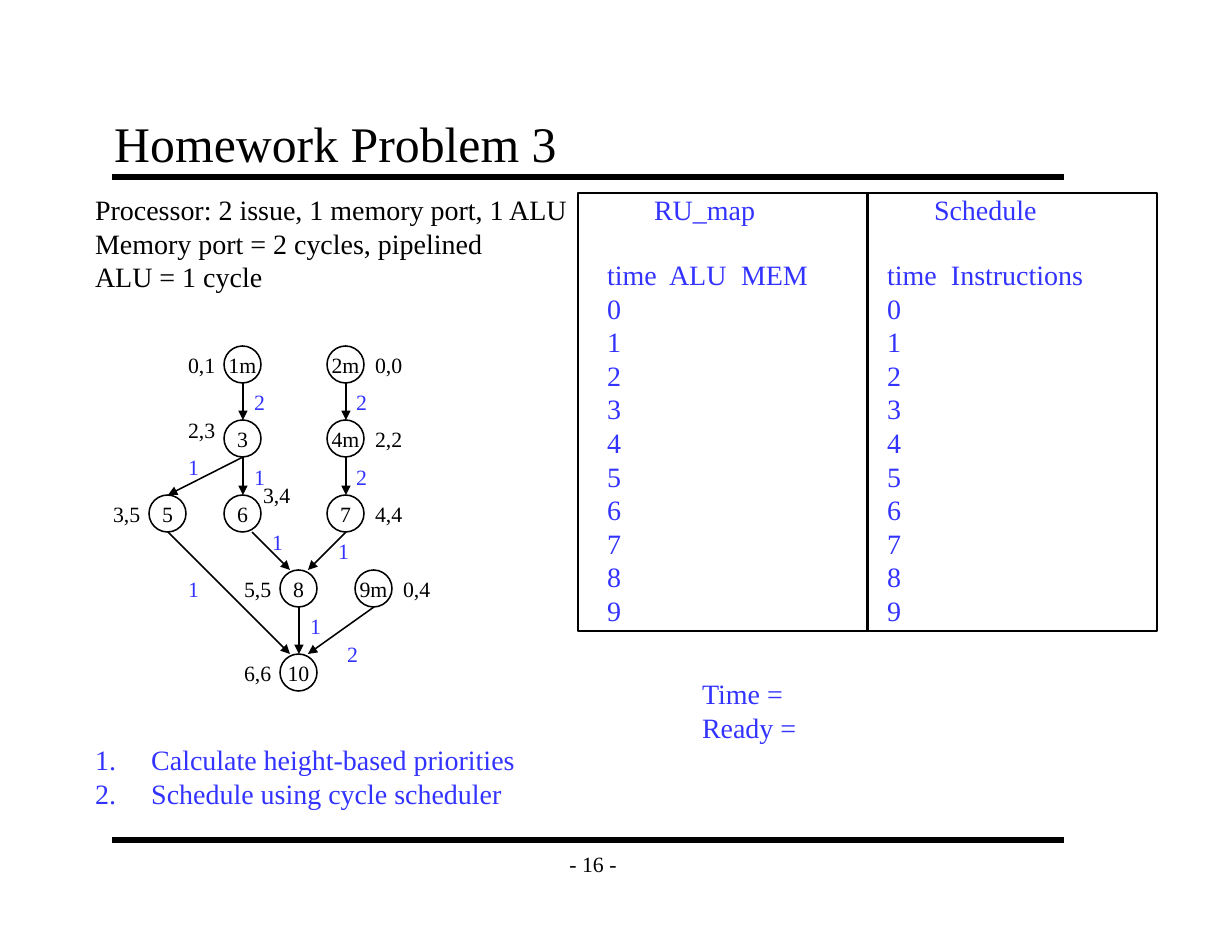
from lxml.etree import SubElement
from pptx import Presentation
from pptx.dml.color import RGBColor
from pptx.enum.shapes import MSO_CONNECTOR as CONNECTOR, MSO_SHAPE as SHAPE
from pptx.enum.text import MSO_ANCHOR as ANCHOR, MSO_AUTO_SIZE as AUTO, PP_ALIGN as ALIGN
from pptx.oxml.ns import qn
from pptx.util import Emu, Pt

EMU_PER_PX = 914400 / 112
BLACK, BLUE = "000000", "3333FF"
NODE, MID = 37, 19  # node diameter and its middle


def px(*lengths):
    return [Emu(round(n * EMU_PER_PX)) for n in lengths]


def write(shape, lines, size, color=BLACK, align=ALIGN.LEFT, anchor=ANCHOR.TOP):
    frame = shape.text_frame
    frame.auto_size = AUTO.NONE
    frame.word_wrap = False
    frame.vertical_anchor = anchor
    for i, line in enumerate(lines):
        para = frame.paragraphs[0] if i == 0 else frame.add_paragraph()
        para.alignment = align
        para.space_before = Pt(0)
        span = para.add_run()
        span.text = line
        span.font.name = "Times New Roman"
        span.font.size = Pt(size)
        span.font.color.rgb = RGBColor.from_string(color)
    return frame


deck = Presentation()
deck.slide_width, deck.slide_height = px(1232, 952)
page = deck.slides.add_slide(deck.slide_layouts[1])
shapes = page.shapes

# Title
title = shapes.title
title.left, title.top, title.width, title.height = px(103, 103, 952, 75)
write(title, ["Homework Problem 3"], 32, anchor=ANCHOR.BOTTOM)

# Task list with automatic numbers
tasks = page.placeholders[1]
tasks.left, tasks.top, tasks.width, tasks.height = px(84, 737, 458, 80)
frame = write(tasks, ["Calculate height-based priorities",
                      "Schedule using cycle scheduler"], 18, BLUE)
for para in frame.paragraphs:
    props = para._p.get_or_add_pPr()
    props.set("marL", "457200")
    props.set("indent", "-457200")
    SubElement(props, qn("a:buFont"), typeface="Times New Roman")
    SubElement(props, qn("a:buAutoNum"), type="arabicPeriod")

# Graph nodes: left, top, priority, offset of the priority label
LEFT, RIGHT = (-47, 0), (37, 0)
nodes = {
    "1m": (224, 346, "0,1", LEFT),
    "2m": (327, 346, "0,0", RIGHT),
    "3": (224, 420, "2,3", (-47, -9)),
    "4m": (327, 420, "2,2", RIGHT),
    "5": (149, 495, "3,5", LEFT),
    "6": (224, 495, "3,4", (28, -19)),
    "7": (327, 495, "4,4", RIGHT),
    "8": (280, 570, "5,5", LEFT),
    "9m": (355, 570, "0,4", RIGHT),
    "10": (280, 654, "6,6", LEFT),
}
for name, (left, top, priority, (dx, dy)) in nodes.items():
    circle = shapes.add_shape(SHAPE.OVAL, *px(left, top, NODE, NODE))
    circle.shadow.inherit = False
    circle.fill.background()
    circle.line.color.rgb = RGBColor.from_string(BLACK)
    circle.line.width = Pt(1)
    frame = write(circle, [name], 14, align=ALIGN.CENTER, anchor=ANCHOR.MIDDLE)
    frame.margin_left = frame.margin_right = frame.margin_top = frame.margin_bottom = 0
    box = shapes.add_textbox(*px(left + dx, top + dy, 49, 37))
    write(box, [priority], 14)

# Graph edges: parent, child, shift at each end, latency, place of its label
edges = [
    ("1m", "3", 0, 0, "2", 243, 383),
    ("2m", "4m", 0, 0, "2", 345, 383),
    ("4m", "7", 0, 0, "2", 345, 458),
    ("3", "6", 0, 0, "1", 243, 458),
    ("3", "5", 0, 0, "1", 177, 448),
    ("5", "10", 0, -9, "1", 177, 570),
    ("6", "8", 9, -9, "1", 261, 523),
    ("7", "8", 0, 9, "1", 327, 532),
    ("8", "10", 0, 0, "1", 299, 607),
    ("9m", "10", 0, 9, "2", 336, 635),
]
lines = []
for parent, child, shift_out, shift_in, latency, left, top in edges:
    x1, y1 = nodes[parent][:2]
    x2, y2 = nodes[child][:2]
    lines.append((x1 + MID + shift_out, y1 + NODE, x2 + MID + shift_in, y2, 1))
    box = shapes.add_textbox(*px(left, top, 34, 37))
    write(box, [latency], 14, BLUE)

# Rules above and below the content, then the edges with arrowheads
rules = [(112, y, 1064, y, 4) for y in (177, 840)]
for *ends, weight in rules + lines:
    line = shapes.add_connector(CONNECTOR.STRAIGHT, *px(*ends))
    line.line.color.rgb = RGBColor.from_string(BLACK)
    line.line.width = Pt(weight)
    if weight == 1:
        SubElement(line.line._get_or_add_ln(), qn("a:tailEnd"), type="triangle")
    SubElement(line._element.spPr, qn("a:effectLst"))

# Empty tables to fill in: left, heading, column names, tab stops
panels = [
    (578, "RU_map", "time\tALU\tMEM", (62, 134)),
    (867, "Schedule", "time\tInstructions", (64,)),
]
for i, (left, heading, columns, stops) in enumerate(panels):
    border = shapes.add_shape(SHAPE.RECTANGLE, *px(left, 193, 290, 438))
    border.shadow.inherit = False
    border.fill.background()
    border.line.color.rgb = RGBColor.from_string(BLACK)
    border.line.width = Pt(1)
    box = shapes.add_textbox(*px(643 + 280 * i, 187, 125, 45))
    write(box, [heading], 18, BLUE)
    box = shapes.add_textbox(*px(596 + 280 * i, 252, 225, 382))
    frame = write(box, [columns] + [str(n) for n in range(10)], 18, BLUE)
    tabs = SubElement(frame.paragraphs[0]._p.get_or_add_pPr(), qn("a:tabLst"))
    for stop in stops:
        SubElement(tabs, qn("a:tab"), pos=str(px(stop)[0]), algn="l")

# Processor description and scheduler state
notes = [
    (84, 187, 500, 113, BLACK, ["Processor: 2 issue, 1 memory port, 1 ALU",
                                "Memory port = 2 cycles, pipelined",
                                "ALU = 1 cycle"]),
    (691, 671, 125, 80, BLUE, ["Time =", "Ready ="]),
]
for *place, color, text in notes:
    box = shapes.add_textbox(*px(*place))
    write(box, text, 18, color)

# Page number
box = shapes.add_textbox(*px(551, 840, 84, 47))
write(box, ["- 16 -"], 14, align=ALIGN.CENTER, anchor=ANCHOR.MIDDLE)

deck.save("out.pptx")
